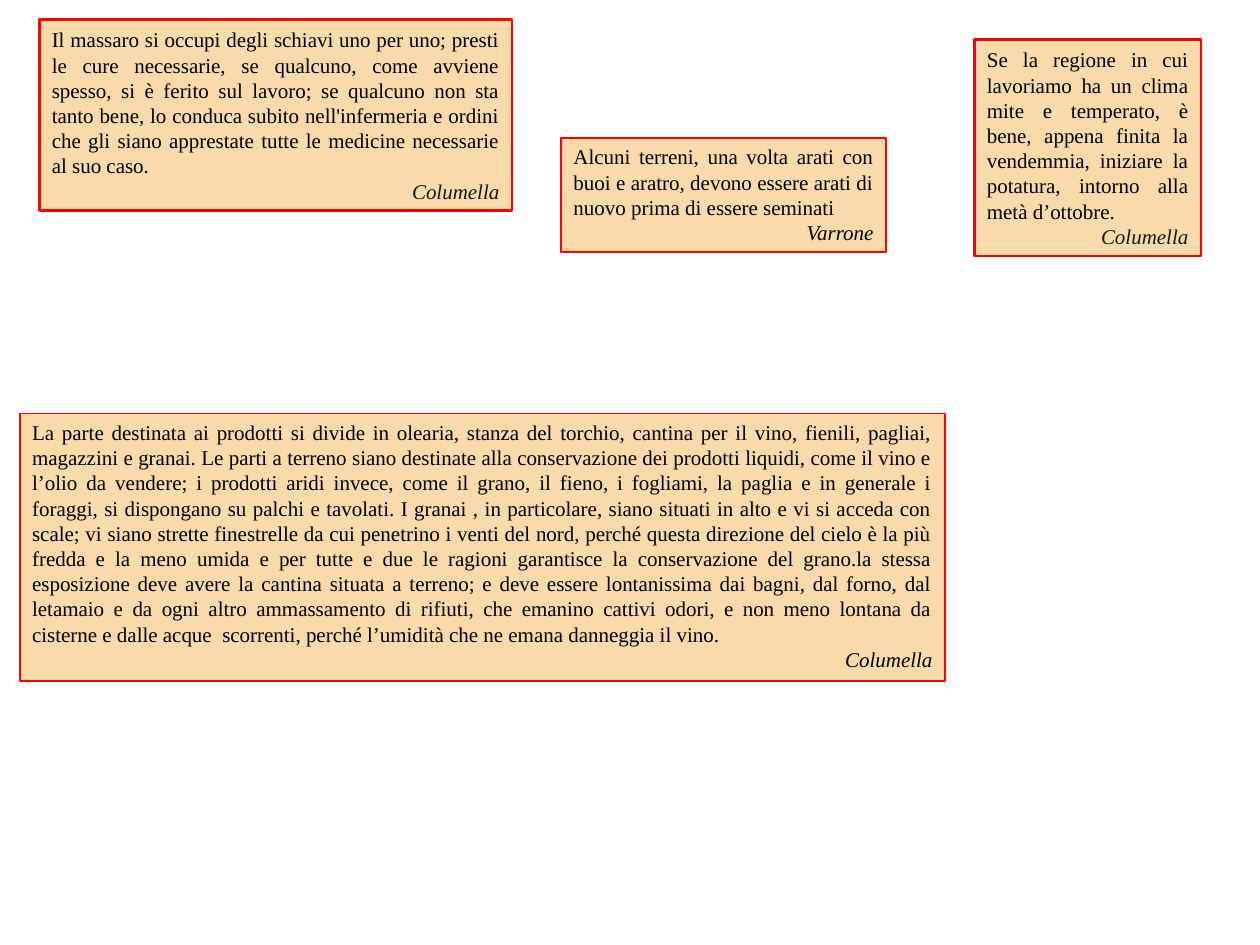
from pptx import Presentation
from pptx.dml.color import RGBColor
from pptx.enum.shapes import MSO_SHAPE as Shape
from pptx.enum.text import MSO_ANCHOR as Anchor, MSO_AUTO_SIZE as AutoSize, PP_ALIGN as Align
from pptx.util import Inches, Pt

WIDTH, HEIGHT = Inches(10), Inches(7.5)
COLUMNS, ROWS = 64, 48
SAND, RED, BLACK, DARK_GREEN = "F9DAAB", "FF0000", "000000", "111A10"
BODY_FORMAT = {"name": "Times New Roman", "size": Pt(12)}
AUTHOR_FORMAT = {**BODY_FORMAT, "italic": True}

QUOTES = [
    {
        "cell": (49.5, 2, 11.5, 11),
        "clauses": [
            "Se la regione in cui lavoriamo ha un clima mite e temperato, è bene, "
            "appena finita la vendemmia, iniziare la potatura, intorno alla metà d’ottobre.",
        ],
        "author": "Columella",
        "author_color": DARK_GREEN,
        "border": 1.5,
        "anchor": Anchor.MIDDLE,
    },
    {
        "cell": (28.5, 7, 16.5, 5.8),
        "clauses": [
            "Alcuni terreni, una volta arati con buoi e aratro, devono essere arati di "
            "nuovo prima di essere seminati",
        ],
        "author": "Varrone",
        "author_color": BLACK,
        "border": 1,
        "anchor": Anchor.TOP,
    },
    {
        "cell": (2, 1, 24, 9.7),
        "clauses": [
            "Il massaro si occupi degli schiavi uno per uno;",
            "presti le cure necessarie, se qualcuno, come avviene spesso, si è ferito sul lavoro;",
            "se qualcuno non sta tanto bene, lo conduca subito nell'infermeria e ordini che gli "
            "siano apprestate tutte le medicine necessarie al suo caso. ",
        ],
        "author": "Columella",
        "author_color": DARK_GREEN,
        "border": 1.5,
        "anchor": Anchor.MIDDLE,
    },
    {
        "cell": (1, 21, 47, 13.6),
        "clauses": [
            "La parte destinata ai prodotti si divide in olearia, stanza del torchio, "
            "cantina per il vino, fienili, pagliai, magazzini e granai.",
            "Le parti a terreno siano destinate alla conservazione dei prodotti liquidi, "
            "come il vino e l’olio da vendere;",
            "i prodotti aridi invece, come il grano, il fieno, i fogliami, la paglia e in "
            "generale i foraggi, si dispongano su palchi e tavolati.",
            "I granai , in particolare, siano situati in alto e vi si acceda con scale;",
            "vi siano strette finestrelle da cui penetrino i venti del nord, perché questa "
            "direzione del cielo è la più fredda e la meno umida e per tutte e due le ragioni "
            "garantisce la conservazione del grano.la stessa esposizione deve avere la "
            "cantina situata a terreno;",
            "e deve essere lontanissima dai bagni, dal forno, dal letamaio e da ogni altro "
            "ammassamento di rifiuti, che emanino cattivi odori, e non meno lontana da "
            "cisterne e dalle acque  scorrenti, perché l’umidità che ne emana danneggia il vino.",
        ],
        "author": "Columella",
        "author_color": BLACK,
        "border": 1,
        "anchor": Anchor.TOP,
    },
]


def set_color(color_format, hex_color):
    color_format.rgb = RGBColor.from_string(hex_color)


def apply_format(target, values):
    for attribute, value in values.items():
        setattr(target, attribute, value)


def place(column, row, columns, rows):
    across, down = WIDTH / COLUMNS, HEIGHT / ROWS
    return [round(length) for length in
            (column * across, row * down, columns * across, rows * down)]


def write_paragraph(paragraph, words, alignment, font_format, hex_color):
    paragraph.alignment = alignment
    run = paragraph.add_run()
    run.text = words
    apply_format(run.font, font_format)
    set_color(run.font.color, hex_color)


def add_quote(slide, cell, clauses, author, author_color, border, anchor):
    panel = slide.shapes.add_shape(Shape.RECTANGLE, *place(*cell))
    panel.shadow.inherit = False
    panel.fill.solid()
    set_color(panel.fill.fore_color, SAND)
    set_color(panel.line.color, RED)
    panel.line.width = Pt(border)

    frame = panel.text_frame
    apply_format(frame, {
        "word_wrap": True,
        "vertical_anchor": anchor,
        "auto_size": AutoSize.SHAPE_TO_FIT_TEXT,
    })
    passage = " ".join(clauses)
    write_paragraph(frame.paragraphs[0], passage, Align.JUSTIFY, BODY_FORMAT, BLACK)
    write_paragraph(frame.add_paragraph(), author, Align.RIGHT, AUTHOR_FORMAT, author_color)


def main():
    deck = Presentation()
    apply_format(deck, {"slide_width": WIDTH, "slide_height": HEIGHT})
    slide = deck.slides.add_slide(deck.slide_layouts[6])
    for quote in QUOTES:
        add_quote(slide, **quote)
    deck.save("out.pptx")


if __name__ == "__main__":
    main()
